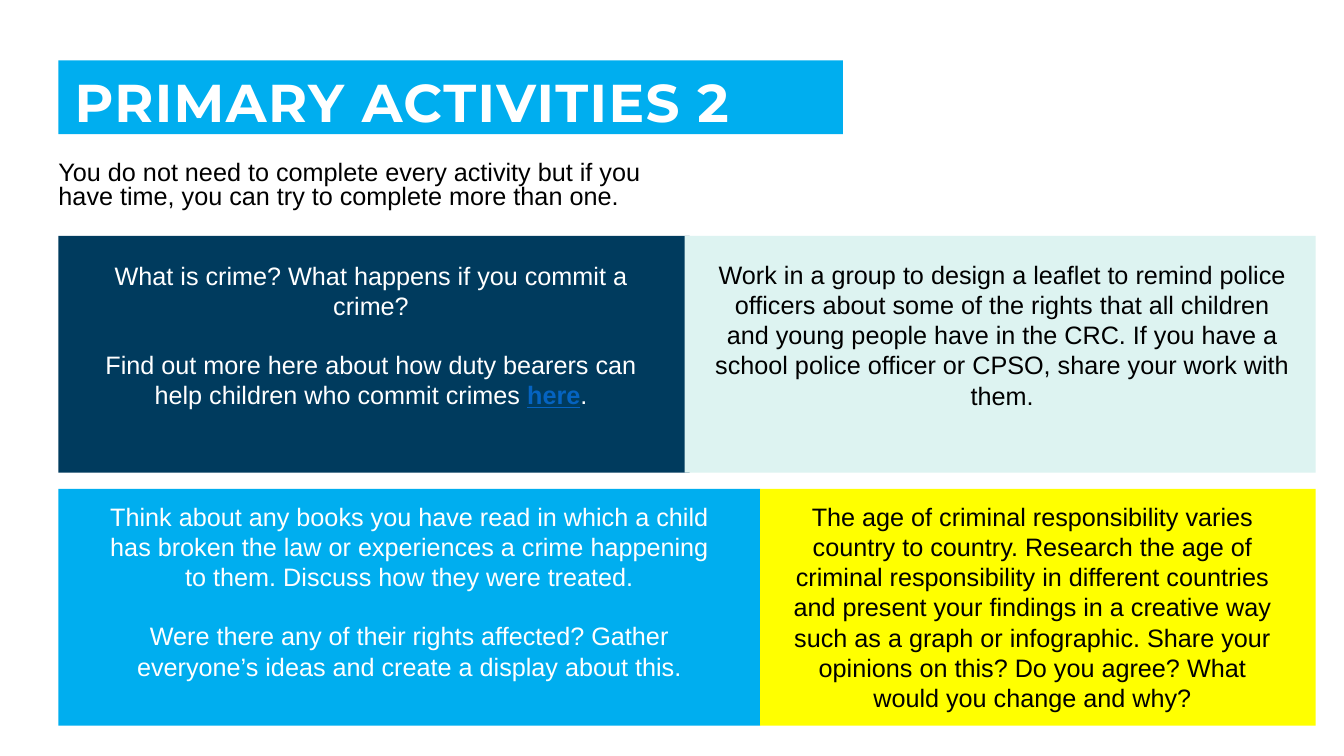
"""Build the Primary Activities 2 slide with four activity panels."""
from pptx import Presentation
from pptx.dml.color import RGBColor
from pptx.enum.shapes import MSO_SHAPE
from pptx.enum.text import MSO_ANCHOR, PP_ALIGN
from pptx.util import Inches, Pt

COLORS = {
    "sky": "00AEEF", "navy": "003B5E", "mint": "DDF3F1", "yellow": "FFFF00",
    "white": "FFFFFF", "black": "000000", "link": "0563C1",
}
TITLE = "PRIMARY ACTIVITIES 2"
INTRO = ("You do not need to complete every activity but if you have time, "
         "you can try to complete more than one.")
LINK_WORD = "here"
LEFT, RIGHT = 0.58, 13.05
PANEL_TOP, PANEL_HEIGHT, ROW_STEP = 2.34, 2.35, 2.51
PARAGRAPH_GAP = 20.7

ACTIVITIES = [
    {"row": 0, "left": LEFT, "right": 6.84, "fill": "navy", "ink": "white",
     "text_box": (0.9, 2.53, 5.56, 1.88),
     "paragraphs": [
         ["What is crime? What happens if you commit a crime?"],
         ["Find out more here about how duty bearers can help children who commit crimes ",
          LINK_WORD, "."]]},
    {"row": 1, "left": LEFT, "right": 7.54, "fill": "sky", "ink": "white",
     "text_box": (0.92, 4.92, 6.28, 1.92),
     "paragraphs": [
         ["Think about any books you have read in which a child has broken the law or "
          "experiences a crime happening to them. Discuss how they were treated."],
         ["Were there any of their rights affected? Gather everyone’s ideas and create "
          "a display about this."]]},
    {"row": 0, "left": 6.79, "right": RIGHT, "fill": "mint", "ink": "black",
     "text_box": (6.96, 2.52, 5.96, 1.62),
     "paragraphs": [
         ["Work in a group to design a leaflet to remind police officers about some of the "
          "rights that all children and young people have in the CRC. If you have a school "
          "police officer or CPSO, share your work with them."]]},
    {"row": 1, "left": 7.54, "right": RIGHT, "fill": "yellow", "ink": "black",
     "text_box": (7.76, 4.92, 4.96, 2.22),
     "paragraphs": [
         ["The age of criminal responsibility varies country to country. Research the age of "
          "criminal responsibility in different countries and present your findings in a "
          "creative way such as a graph or infographic. Share your opinions on this? Do you "
          "agree? What would you change and why?"]]},
]


def rgb(name):
    """Return the named palette colour."""
    return RGBColor.from_string(COLORS[name])


def style(span, color, size=18, face="Arial", bold=False):
    """Set the font of one run."""
    span.font.name, span.font.size, span.font.bold = face, Pt(size), bold
    span.font.color.rgb = rgb(color)


def set_margins(frame, left, top, right, bottom):
    """Set the four insets of a text frame in inches."""
    frame.margin_left, frame.margin_top = Inches(left), Inches(top)
    frame.margin_right, frame.margin_bottom = Inches(right), Inches(bottom)


def add_title(page):
    """Format the title placeholder as a filled banner."""
    box = page.shapes.title
    box.left, box.top, box.width, box.height = map(Inches, (LEFT, 0.6, 7.78, 0.73))
    box.fill.solid()
    box.fill.fore_color.rgb = rgb("sky")
    frame = box.text_frame
    frame.text = TITLE
    frame.vertical_anchor = MSO_ANCHOR.MIDDLE
    set_margins(frame, 0.16, 0.16, 0.12, 0)
    para = frame.paragraphs[0]
    para.alignment, para.line_spacing = PP_ALIGN.LEFT, 0.9
    span = para.runs[0]
    style(span, "white", 38, "Montserrat", True)
    span.font._element.set("spc", "100")


def add_intro(page):
    """Add the instruction under the title."""
    box = page.shapes.add_textbox(*map(Inches, (LEFT, 1.56, 6.21, 0.62)))
    frame = box.text_frame
    frame.word_wrap = True
    set_margins(frame, 0, 0.05, 0.1, 0.05)
    frame.text = INTRO
    frame.paragraphs[0].line_spacing = 0.8
    style(frame.paragraphs[0].runs[0], "black")


def add_panel(page, activity):
    """Add the coloured rectangle of one activity."""
    left, top = activity["left"], PANEL_TOP + activity["row"] * ROW_STEP
    size = (left, top, activity["right"] - left, PANEL_HEIGHT)
    panel = page.shapes.add_shape(MSO_SHAPE.RECTANGLE, *map(Inches, size))
    panel.shadow.inherit = False
    panel.fill.solid()
    panel.fill.fore_color.rgb = rgb(activity["fill"])
    panel.line.fill.background()


def add_activity_text(page, activity):
    """Add the centred wording of one activity."""
    frame = page.shapes.add_textbox(*map(Inches, activity["text_box"])).text_frame
    frame.word_wrap = True
    for index, pieces in enumerate(activity["paragraphs"]):
        para = frame.add_paragraph() if index else frame.paragraphs[0]
        para.alignment = PP_ALIGN.CENTER
        if index:
            para.space_before = Pt(PARAGRAPH_GAP)
        for piece in pieces:
            span = para.add_run()
            span.text = piece
            is_link = piece == LINK_WORD
            style(span, "link" if is_link else activity["ink"], bold=is_link)
            if is_link:
                span.font.underline = True


def main():
    """Assemble and save the deck."""
    deck = Presentation()
    deck.slide_width, deck.slide_height = Inches(13.33), Inches(7.5)
    page = deck.slides.add_slide(deck.slide_layouts[5])
    add_title(page)
    add_intro(page)
    for activity in ACTIVITIES:
        add_panel(page, activity)
    for activity in ACTIVITIES:
        add_activity_text(page, activity)
    deck.save("out.pptx")


if __name__ == "__main__":
    main()
